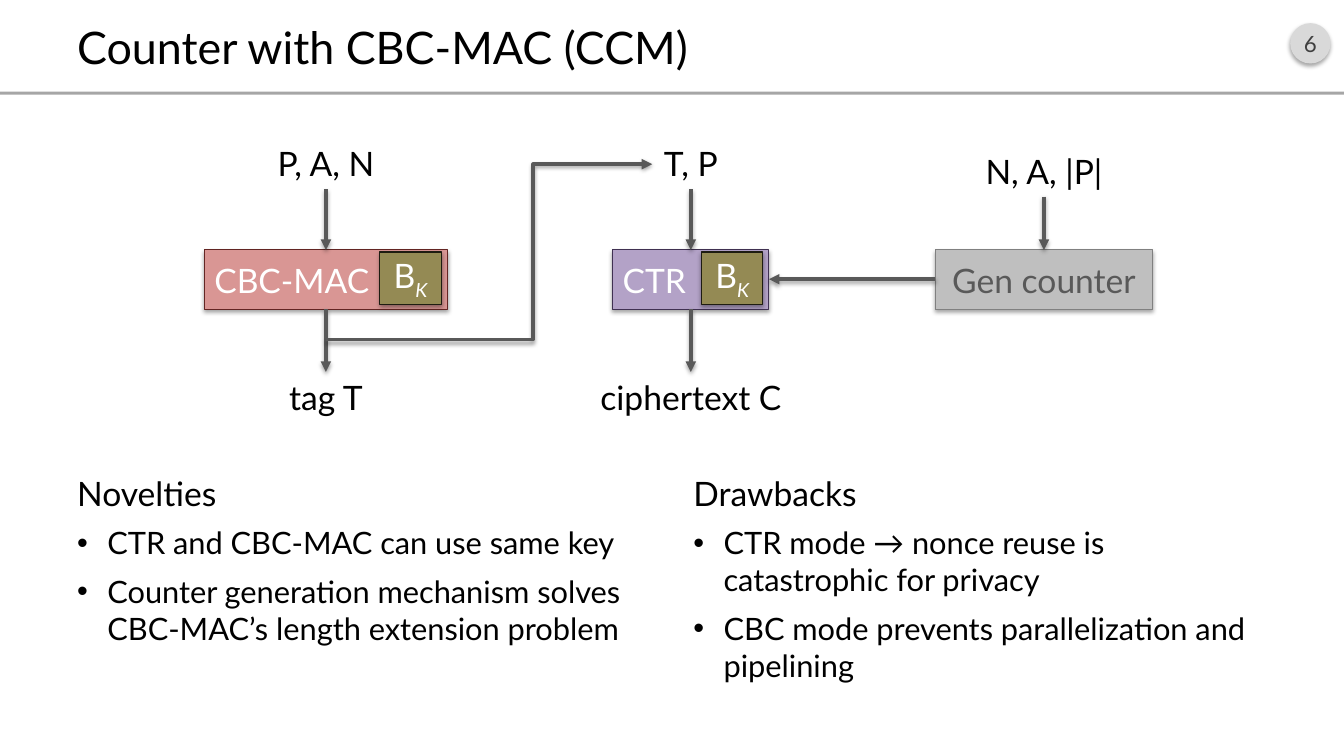
from lxml import etree
from pptx import Presentation, util as u
from pptx.dml.color import RGBColor
from pptx.enum import shapes, text
from pptx.oxml.ns import qn

presentation = Presentation()
presentation.slide_width, presentation.slide_height = u.Inches(13.33), u.Inches(7.5)
slide = presentation.slides.add_slide(presentation.slide_layouts[6])
column, row = presentation.slide_width / 40, presentation.slide_height / 30
left_align, centre_align = text.PP_ALIGN.LEFT, text.PP_ALIGN.CENTER


def paint(fill, colour):
    fill.solid()
    fill.fore_color.rgb = RGBColor.from_string(colour)


def cast_shadow(properties, opacity):
    effects = etree.SubElement(properties, qn("a:effectLst"))
    shadow = etree.SubElement(effects, qn("a:outerShdw"), blurRad=str(u.Pt(3.1)),
                              dist=str(u.Pt(1.7)), dir="5400000", rotWithShape="0")
    black = etree.SubElement(shadow, qn("a:srgbClr"), val="000000")
    etree.SubElement(black, qn("a:alpha"), val=str(opacity * 1000))


rectangle, ellipse = shapes.MSO_SHAPE.RECTANGLE, shapes.MSO_SHAPE.OVAL
mac, ctr, counter = 9.7, 20.56, 31.07
box_top, box_height = 9.92, 2.36
box_bottom = box_top + box_height
key_width, key_gap = 1.83, 0.18
mac_width, ctr_width, counter_width = 7.23, 4.65, 6.48
key_style = (key_width, 2.08, "948A54", "1E1C11", "B_K", "FFFFFF", 24, centre_align)

boxes = [
    (ellipse, 38.4, 0.92, 1.2, 1.6, "D9D9D9", None, "6", "404040", 16, centre_align),
    (rectangle, 0, 3.64, 40, 0.12, "A6A6A6", None, "", "000000", 16, centre_align),
    (rectangle, mac - mac_width / 2, box_top, mac_width, box_height,
     "D99694", "632523", "CBC-MAC", "FFFFFF", 24, left_align),
    (rectangle, mac + mac_width / 2 - key_gap - key_width, 10, *key_style),
    (rectangle, ctr - ctr_width / 2, box_top, ctr_width, box_height,
     "B3A2C7", "403152", "CTR", "FFFFFF", 24, left_align),
    (rectangle, ctr + ctr_width / 2 - key_gap - key_width, 10, *key_style),
    (rectangle, counter - counter_width / 2, box_top, counter_width, box_height,
     "BFBFBF", "808080", "Gen counter", "595959", 24, centre_align),
    (None, 2, 0.64, 36, 2.4, None, None,
     "Counter with CBC-MAC (CCM)", "000000", 32, left_align),
]
for centre, top, width, label in [(mac, 5.48, 3.69, "P, A, N"), (mac, 14.76, 2.88, "tag T"),
                                  (ctr, 5.48, 2.34, "T, P"), (ctr, 14.76, 6.18, "ciphertext C"),
                                  (counter, 5.8, 4.23, "N, A, |P|")]:
    boxes.append((None, centre - width / 2, top, width, 2, None, None,
                  label, "000000", 24, centre_align))

for kind, left, top, width, height, fill, outline, label, colour, size, alignment in boxes:
    place = [int(left * column), int(top * row), int(width * column), int(height * row)]
    if kind is None:
        shape = slide.shapes.add_textbox(*place)
    else:
        shape = slide.shapes.add_shape(kind, *place)
        paint(shape.fill, fill)
        if outline:
            paint(shape.line.fill, outline)
            shape.line.width = u.Pt(0.75)
        else:
            shape.line.fill.background()
        if label:
            cast_shadow(shape._element.spPr, 35)
        else:
            shape.shadow.inherit = False
    frame = shape.text_frame
    frame.word_wrap = size == 32
    frame.vertical_anchor = text.MSO_ANCHOR.MIDDLE
    if kind == ellipse:
        frame.margin_left = frame.margin_right = 0
    paragraph = frame.paragraphs[0]
    paragraph.alignment = alignment
    for index, part in enumerate(label.split("_") if label else []):
        run = paragraph.add_run()
        run.text = part
        for name, value in {"name": "Lato", "size": u.Pt(size), "italic": index == 1}.items():
            setattr(run.font, name, value)
        paint(run.font.fill, colour)
        if index:
            run.font._element.set("baseline", "-25000")

straight, elbow = shapes.MSO_CONNECTOR.STRAIGHT, shapes.MSO_CONNECTOR.ELBOW
arrows = [(straight, x, start, x, end) for x in (mac, ctr)
          for start, end in [(7.52, box_top), (box_bottom, 14.76)]]
arrows += [
    (straight, counter, 7.8, counter, box_top),
    (straight, counter - counter_width / 2, 11.08, ctr + ctr_width / 2, 11.08),
    (elbow, mac, 13.48, 19.41, 6.52),
]
for kind, *ends in arrows:
    connector = slide.shapes.add_connector(
        kind, *[int(end * unit) for end, unit in zip(ends, (column, row) * 2)])
    paint(connector.line.fill, "595959")
    connector.line.width = u.Pt(2.5)
    properties = connector._element.spPr
    etree.SubElement(connector.line._get_or_add_ln(), qn("a:tailEnd"), type="triangle")
    cast_shadow(properties, 38)
    if kind == elbow:
        guides = properties.find(qn("a:prstGeom")).find(qn("a:avLst"))
        etree.SubElement(guides, qn("a:gd"), name="adj1", fmla="val 63500")

lists = [
    (2, "Novelties", "CTR and CBC-MAC can use same key",
     "Counter generation mechanism solves CBC-MAC’s length extension problem"),
    (20.34, "Drawbacks", "CTR mode → nonce reuse is catastrophic for privacy",
     "CBC mode prevents parallelization and pipelining"),
]
for left, *lines in lists:
    shape = slide.shapes.add_textbox(int(left * column), int(18.56 * row),
                                     int(17.67 * column), int(9.24 * row))
    frame = shape.text_frame
    frame.word_wrap = True
    for index, line in enumerate(lines):
        paragraph = frame.add_paragraph() if index else frame.paragraphs[0]
        paragraph.space_before = u.Pt(8)
        run = paragraph.add_run()
        run.text = line
        for name, value in {"name": "Lato", "size": u.Pt(22 if index else 24)}.items():
            setattr(run.font, name, value)
        paint(run.font.fill, "000000")
        if index:
            settings = paragraph._p.get_or_add_pPr()
            indent = int(0.9 * column)
            settings.set("marL", str(indent))
            settings.set("indent", str(-indent))
            etree.SubElement(settings, qn("a:buFont"), typeface="Arial")
            etree.SubElement(settings, qn("a:buChar"), char="•")

presentation.save("out.pptx")
